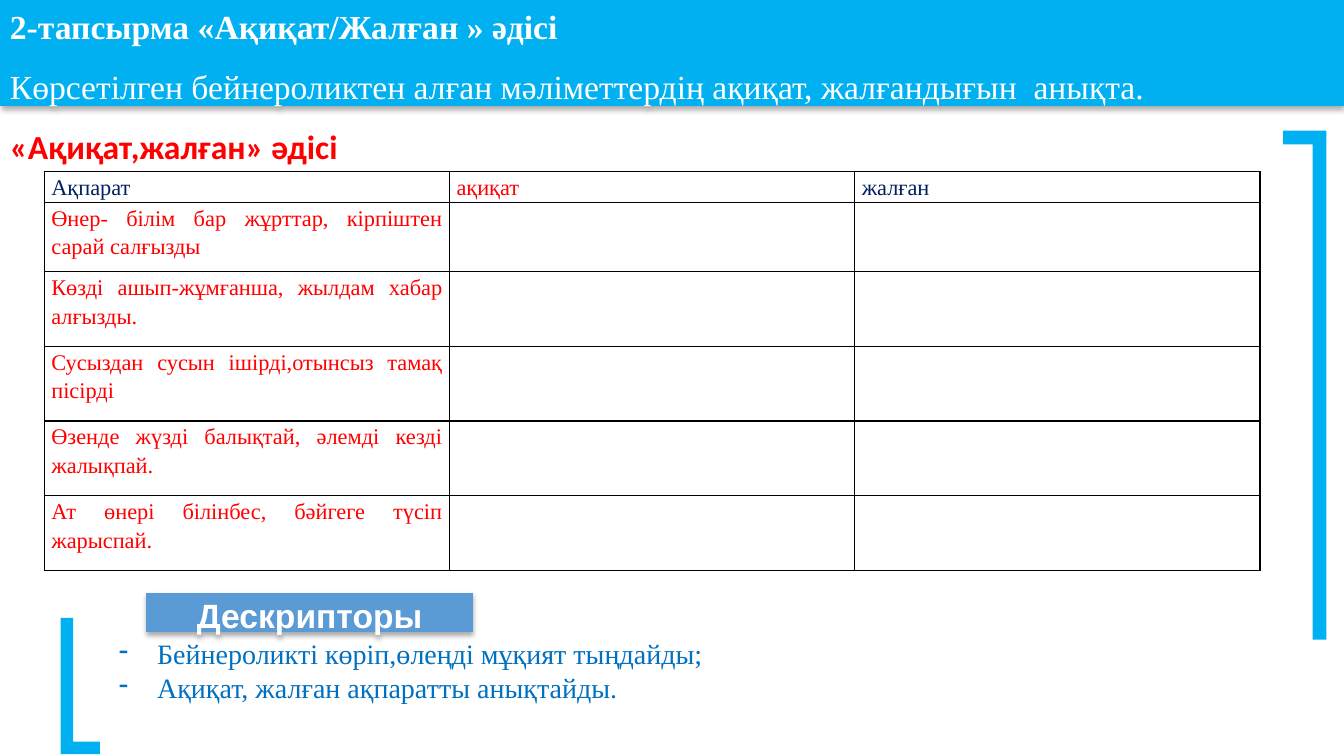
from lxml import etree
from pptx import Presentation
from pptx.dml.color import RGBColor
from pptx.enum.shapes import MSO_SHAPE as Shape
from pptx.enum.text import MSO_ANCHOR as Anchor, MSO_AUTO_SIZE as Auto, PP_ALIGN as Align
from pptx.oxml import parse_xml
from pptx.oxml.ns import nsdecls, qn
from pptx.util import Inches, Pt

SKY = RGBColor(0x00, 0xB0, 0xF0)
STEEL = RGBColor(0x5B, 0x9B, 0xD5)
WHITE = RGBColor(0xFF, 0xFF, 0xFF)
RED = RGBColor(0xFF, 0x00, 0x00)
NAVY = RGBColor(0x00, 0x20, 0x60)
BLUE = RGBColor(0x00, 0x70, 0xC0)
BLACK = RGBColor(0x00, 0x00, 0x00)
SERIF = "Times New Roman"

HEADS = [("Ақпарат ", NAVY), ("ақиқат", RED), ("жалған ", NAVY)]
FACTS = [
    "Өнер- білім бар жұрттар, кірпіштен сарай салғызды",
    "Көзді ашып-жұмғанша, жылдам хабар алғызды.",
    "Сусыздан сусын ішірді,отынсыз тамақ пісірді",
    "Өзенде жүзді балықтай, әлемді кезді жалықпай.",
    "Ат өнері білінбес, бәйгеге түсіп жарыспай.",
]
TASKS = [
    "Бейнероликті көріп,өлеңді мұқият тыңдайды;",
    "Ақиқат, жалған ақпаратты анықтайды.",
]


def write(frame, text, size=24, font=SERIF, color=WHITE, bold=False,
          align=Align.LEFT, space=None, after=None, bullet=None):
    """Put text in the frame's first paragraph, or in a new one if that is used."""
    para = frame.paragraphs[0]
    if para.runs:
        para = frame.add_paragraph()
    para.alignment = align
    if space:
        para.line_spacing = space
    if after:
        para.space_after = Pt(after)
    if bullet:
        props = para._p.get_or_add_pPr()
        props.set("marL", str(Inches(0.38)))
        props.set("indent", str(-Inches(0.38)))
        etree.SubElement(props, qn("a:buChar")).set("char", bullet)
    run = para.add_run()
    run.text = text
    run.font.size = Pt(size)
    run.font.name = font
    run.font.bold = bold
    run.font.color.rgb = color


class Page:
    """A slide on which every length is a percentage of its width or height."""

    def __init__(self, deck):
        self.deck = deck
        self.slide = deck.slides.add_slide(deck.slide_layouts[6])
        self.shapes = self.slide.shapes

    def wide(self, share):
        return round(self.deck.slide_width * share / 100)

    def tall(self, share):
        return round(self.deck.slide_height * share / 100)

    def area(self, x, y, w, h):
        return self.wide(x), self.tall(y), self.wide(w), self.tall(h)

    def block(self, kind, box, fill):
        item = self.shapes.add_shape(kind, *self.area(*box))
        item.shadow.inherit = False
        item.fill.solid()
        item.fill.fore_color.rgb = fill
        item.line.fill.background()
        return item

    def corner(self, box, turn):
        item = self.block(Shape.BENT_UP_ARROW, box, SKY)
        item.rotation = turn
        for i, value in enumerate((0.317, 0, 0)):
            item.adjustments[i] = value

    def panel(self, kind, box, fill):
        """Add a block with a soft shadow below it and return its text frame."""
        item = self.block(kind, box, fill)
        item._element.spPr.find(qn("a:effectLst")).append(parse_xml(
            f'<a:outerShdw {nsdecls("a")} blurRad="{Pt(3.5)}" dist="{Pt(2.2)}" '
            'dir="5400000" rotWithShape="0"><a:srgbClr val="000000">'
            '<a:alpha val="32000"/></a:srgbClr></a:outerShdw>'))
        frame = item.text_frame
        frame.word_wrap = True
        frame.vertical_anchor = Anchor.MIDDLE
        return frame

    def label(self, box):
        frame = self.shapes.add_textbox(*self.area(*box)).text_frame
        frame.word_wrap = False
        frame.auto_size = Auto.SHAPE_TO_FIT_TEXT
        return frame

    def table(self, x, y, w, rows, cols):
        """Add a bordered table whose rows have the given heights."""
        box = self.area(x, y, w, sum(rows))
        grid = self.shapes.add_table(len(rows), cols, *box).table
        grid.first_row = grid.horz_banding = False
        for row, high in zip(grid.rows, rows):
            row.height = self.tall(high)
        for cell in grid.iter_cells():
            cell.fill.background()
            cell.margin_left = cell.margin_right = Inches(0.07)
            cell.margin_top = cell.margin_bottom = 0
            self.border(cell)
        return grid

    def border(self, cell):
        props = cell._tc.get_or_add_tcPr()
        for i, side in enumerate("LRTB"):
            props.insert(i, parse_xml(
                f'<a:ln{side} {nsdecls("a")} w="{Pt(1)}"><a:solidFill>'
                f'<a:srgbClr val="{BLACK}"/></a:solidFill></a:ln{side}>'))


def main():
    deck = Presentation()
    deck.slide_width, deck.slide_height = Inches(13.33), Inches(7.5)
    page = Page(deck)

    page.corner((78.4, 48.53, 37.36, 5.73), 270)

    bar = page.panel(Shape.RECTANGLE, (0, 0, 100, 14), SKY)
    lines = {"align": Align.JUSTIFY, "space": 1.15, "after": 10}
    write(bar, "2-тапсырма «Ақиқат/Жалған » әдісі", bold=True, **lines)
    write(bar, "Көрсетілген бейнероликтен алған мәліметтердің ақиқат, "
               "жалғандығын  анықта.", **lines)

    write(page.label((0, 16, 26.25, 6.67)), "«Ақиқат,жалған» әдісі",
          font="Calibri", color=RED, bold=True)

    badge = page.panel(Shape.FLOWCHART_INTERNAL_STORAGE, (10.88, 78.4, 24.3, 5.2), STEEL)
    write(badge, "Дескрипторы", font="Arial", bold=True)

    tasks = page.label((8.1, 83.6, 45.3, 10.27))
    for task in TASKS:
        write(tasks, task, size=20, color=BLUE, align=Align.JUSTIFY, bullet="-")

    page.corner((1.13, 87.73, 9.68, 5.2), 90)

    grid = page.table(3.3, 22.67, 90.45, [2.4, 9.2] + [9.87] * 4, len(HEADS))
    style = {"size": 16, "align": Align.JUSTIFY, "space": 1.15}
    for col, (head, color) in enumerate(HEADS):
        write(grid.cell(0, col).text_frame, head, color=color, **style)
    for row, fact in enumerate(FACTS, 1):
        write(grid.cell(row, 0).text_frame, fact, color=RED, **style)

    deck.save("out.pptx")


if __name__ == "__main__":
    main()
